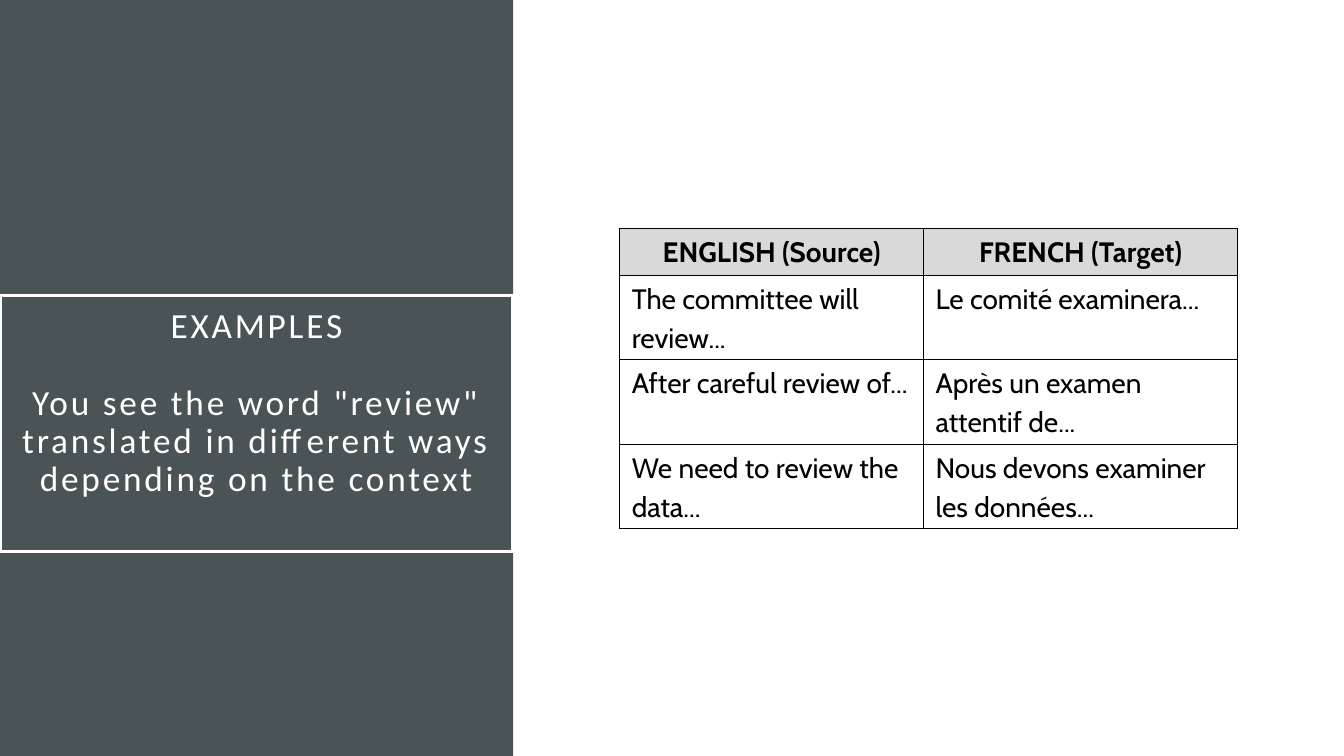
from dataclasses import dataclass

from lxml.etree import SubElement
from pptx import Presentation
from pptx.dml.color import RGBColor
from pptx.enum.text import MSO_ANCHOR, MSO_AUTO_SIZE, PP_ALIGN
from pptx.enum.shapes import MSO_SHAPE
from pptx.oxml.ns import qn
from pptx.util import Pt

PANEL_WIDTH = 366.5
PAGE_WIDTH, PAGE_HEIGHT = 960, 540


@dataclass(frozen=True)
class TextStyle:
    font: str
    size: float
    color: str
    line_spacing: float
    align: PP_ALIGN
    bold: bool = False
    space_before: float = 0
    space_after: float = 0


@dataclass(frozen=True)
class Translation:
    english: str
    french: str


HEADING = TextStyle("Calibri", 25.2, "FFFFFF", 0.9, PP_ALIGN.CENTER)
SUBHEADING = TextStyle("Calibri", 25.2, "FFFFFF", 0.9, PP_ALIGN.CENTER, space_before=27.5)
COLUMN_HEAD = TextStyle("Cabin", 20, "000000", 1.15, PP_ALIGN.CENTER, bold=True, space_after=8)
EXAMPLE = TextStyle("Cabin", 20, "000000", 1.15, PP_ALIGN.LEFT, space_after=8)

TRANSLATIONS = [
    Translation("ENGLISH (Source)", "FRENCH (Target)"),
    Translation("The committee will review...", "Le comité examinera..."),
    Translation("After careful review of...", "Après un examen attentif de..."),
    Translation("We need to review the data...", "Nous devons examiner les données..."),
]


def paint(color_format, color: str) -> None:
    color_format.rgb = RGBColor.from_string(color)


def write(para, text: str, style: TextStyle) -> None:
    para.alignment = style.align
    para.line_spacing = style.line_spacing
    para.space_before = Pt(style.space_before)
    para.space_after = Pt(style.space_after)
    span = para.add_run()
    span.text = text
    span.font.name = style.font
    span.font.size = Pt(style.size)
    span.font.bold = style.bold
    paint(span.font.color, style.color)


def add_panel(page):
    panel = page.shapes.add_shape(MSO_SHAPE.RECTANGLE, 0, 0, Pt(PANEL_WIDTH), Pt(PAGE_HEIGHT))
    panel.shadow.inherit = False
    panel.fill.solid()
    paint(panel.fill.fore_color, "4A5356")
    panel.line.fill.background()
    return panel


def format_title(title) -> None:
    title.left, title.top = Pt(0), Pt(211)
    title.width, title.height = Pt(PANEL_WIDTH), Pt(183)
    paint(title.line.color, "FFFFFF")
    title.line.width = Pt(2.5)
    frame = title.text_frame
    frame.word_wrap = True
    frame.auto_size = MSO_AUTO_SIZE.NONE
    frame.vertical_anchor = MSO_ANCHOR.TOP
    frame.margin_left = frame.margin_right = Pt(14.4)
    frame.margin_top = frame.margin_bottom = Pt(9)
    write(frame.paragraphs[0], "EXAMPLES", HEADING)
    write(
        frame.add_paragraph(),
        'You see the word "review" translated in different ways depending on the context',
        SUBHEADING,
    )
    for properties in title.element.iter(qn("a:rPr")):
        properties.set("spc", "200")


def add_borders(properties, color: str, width: float) -> None:
    for index, side in enumerate(("a:lnL", "a:lnR", "a:lnT", "a:lnB")):
        line = SubElement(properties, qn(side), w=str(Pt(width)))
        SubElement(SubElement(line, qn("a:solidFill")), qn("a:srgbClr"), val=color)
        properties.insert(index, line)


def add_translation_table(page) -> None:
    widths = (217, 224.5)
    heights = (33.2, 60.4, 60.4, 60.4)
    holder = page.shapes.add_table(
        len(heights), len(widths), Pt(442.7), Pt(163.3), Pt(sum(widths)), Pt(sum(heights))
    )
    table = holder.table
    table.first_row = table.horz_banding = False
    for column, width in zip(table.columns, widths):
        column.width = Pt(width)
    for number, (row, height, entry) in enumerate(zip(table.rows, heights, TRANSLATIONS)):
        row.height = Pt(height)
        for cell, text in zip(row.cells, (entry.english, entry.french)):
            cell.margin_left = cell.margin_right = Pt(8.6)
            cell.margin_top, cell.margin_bottom = Pt(1.4), Pt(0)
            if number == 0:
                cell.fill.solid()
                paint(cell.fill.fore_color, "D9D9D9")
            else:
                cell.fill.background()
            write(cell.text_frame.paragraphs[0], text, EXAMPLE if number else COLUMN_HEAD)
    for properties in holder.element.iter(qn("a:tcPr")):
        add_borders(properties, "000000", 1)


def main() -> None:
    deck = Presentation()
    deck.slide_width, deck.slide_height = Pt(PAGE_WIDTH), Pt(PAGE_HEIGHT)
    page = deck.slides.add_slide(deck.slide_layouts[5])
    title = page.shapes.title
    panel = add_panel(page)
    title.element.addprevious(panel.element)
    format_title(title)
    add_translation_table(page)
    deck.save("out.pptx")


if __name__ == "__main__":
    main()
